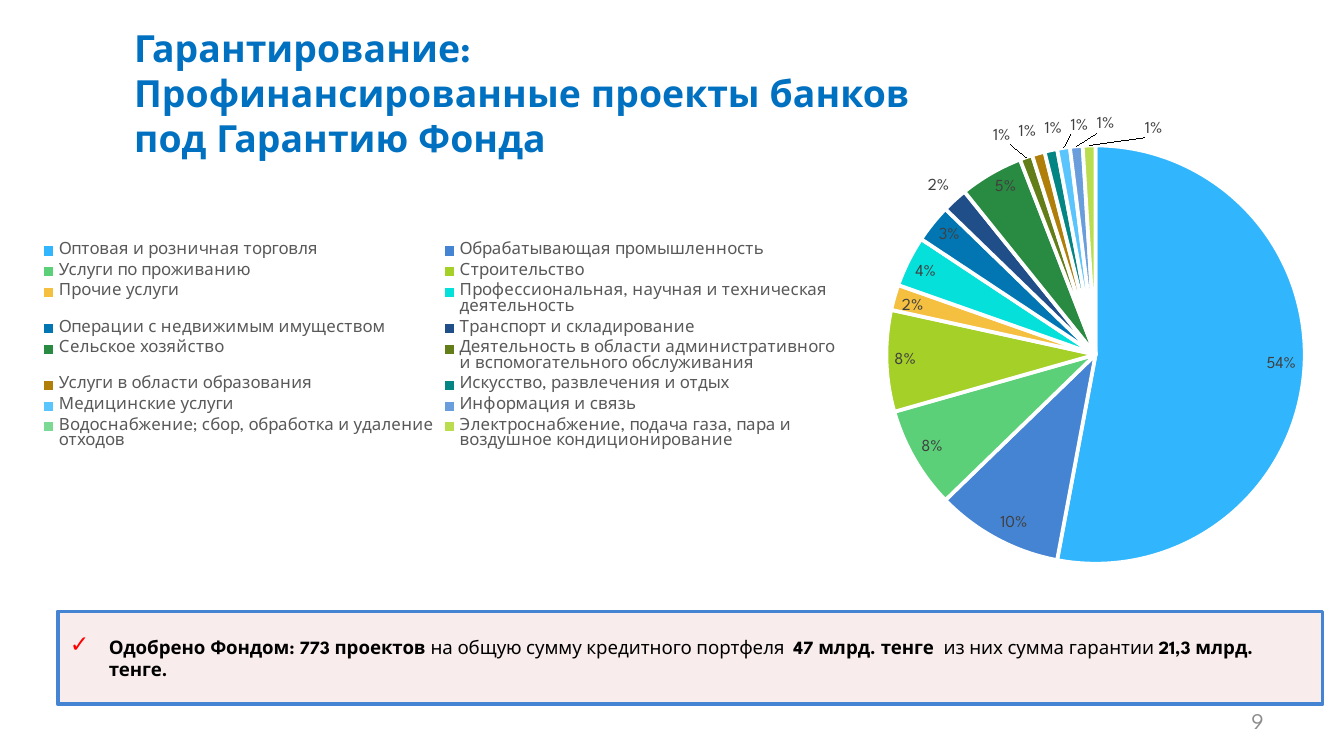
from typing import NamedTuple, Optional

from lxml.etree import SubElement
from pptx import Presentation
from pptx.chart.data import CategoryChartData
from pptx.dml.color import RGBColor
from pptx.enum.chart import XL_CHART_TYPE, XL_LABEL_POSITION, XL_LEGEND_POSITION
from pptx.enum.shapes import MSO_SHAPE
from pptx.enum.text import MSO_ANCHOR, PP_ALIGN
from pptx.oxml import parse_xml
from pptx.oxml.ns import nsdecls, qn
from pptx.util import Inches, Pt

FONT = "League Spartan"


class Sector(NamedTuple):
    name: str
    share: float
    color: str
    outside: bool = False
    shift: Optional[tuple[float, float]] = None  # label offset, share of the chart


SECTORS = [
    Sector("Оптовая и розничная торговля", 0.54, "31B6FD"),
    Sector("Обрабатывающая промышленность", 0.10, "4584D3"),
    Sector("Услуги по проживанию", 0.08, "5BD078"),
    Sector("Строительство", 0.08, "A5D028"),
    Sector("Прочие услуги", 0.02, "F5C040"),
    Sector("Профессиональная, научная и техническая деятельность", 0.04, "05E0DB"),
    Sector("Операции с недвижимым имуществом", 0.03, "0276B3"),
    Sector("Транспорт и складирование", 0.02, "204E88", True),
    Sector("Сельское хозяйство", 0.05, "288B41"),
    Sector("Деятельность в области административного и вспомогательного обслуживания",
           0.01, "637D18", True, (-0.01, -0.01)),
    Sector("Услуги в области образования", 0.01, "B07F09", True, (0, -0.01)),
    Sector("Искусство, развлечения и отдых", 0.01, "038683", True, (0.01, -0.01)),
    Sector("Медицинские услуги", 0.01, "5AC5FD", True, (0.02, -0.01)),
    Sector("Информация и связь", 0.01, "6A9DDC", True, (0.03, -0.01)),
    Sector("Водоснабжение; сбор, обработка и удаление отходов",
           0, "7CD993", True, (0.04, 0)),
    Sector("Электроснабжение, подача газа, пара и воздушное кондиционирование",
           0.01, "B9DD4F", True, (0.05, 0)),
]


def rgb(color: str) -> RGBColor:
    return RGBColor.from_string(color)


def set_font(font, size: float, color: str, bold: bool = False) -> None:
    for key, value in {"name": FONT, "size": Pt(size), "bold": bold}.items():
        setattr(font, key, value)
    font.color.rgb = rgb(color)


def add_text(s, box: tuple, lines: list[str], size: float, color: str,
             bold: bool = False, align=PP_ALIGN.LEFT, anchor=MSO_ANCHOR.TOP) -> None:
    tf = s.shapes.add_textbox(*map(Inches, box)).text_frame
    tf.word_wrap = True
    tf.vertical_anchor = anchor
    for i, line in enumerate(lines):
        p = tf.paragraphs[0] if i == 0 else tf.add_paragraph()
        p.alignment = align
        r = p.add_run()
        r.text = line
        set_font(r.font, size, color, bold)


def place(element, index: int, **values) -> None:
    """Give a chart part a manual layout; modes come before x, y, w and h."""
    for old in element.findall(qn("c:layout")):
        element.remove(old)
    parts = "".join(f'<c:{key} val="{value}"/>' for key, value in values.items())
    element.insert(index, parse_xml(
        f'<c:layout {nsdecls("c")}><c:manualLayout>{parts}</c:manualLayout></c:layout>'))


def add_sector_chart(s) -> None:
    data = CategoryChartData(number_format="0%")
    data.categories = [sector.name for sector in SECTORS]
    data.add_series("Series 1", [sector.share for sector in SECTORS])
    chart = s.shapes.add_chart(XL_CHART_TYPE.PIE, Inches(0.2), Inches(0.61),
                               Inches(9.64), Inches(3.94), data).chart
    chart.has_title = False
    set_font(chart.font, 10, "000000")
    plot = chart.plots[0]
    plot.vary_by_categories = True
    place(plot._element.getparent(), 0, layoutTarget="inner", xMode="edge",
          yMode="edge", x=0.66, y=0.12, w=0.33, h=0.79)

    chart.has_legend = True
    legend = chart.legend
    legend.position = XL_LEGEND_POSITION.LEFT
    legend.include_in_layout = False
    set_font(legend.font, 9, "595959")

    series = plot.series[0]
    labels = series.data_labels
    labels.show_value = True
    labels.number_format = "0%"
    labels.number_format_is_linked = False
    labels.position = XL_LABEL_POSITION.INSIDE_END
    set_font(labels.font, 9, "404040")
    for i, sector in enumerate(SECTORS):
        point = series.points[i]
        point.format.fill.solid()
        point.format.fill.fore_color.rgb = rgb(sector.color)
        point.format.line.color.rgb = rgb("FFFFFF")
        point.format.line.width = Pt(2)
        if sector.outside:
            label = point.data_label
            set_font(label.font, 9, "404040")
            label.position = XL_LABEL_POSITION.OUTSIDE_END
            if sector.shift:
                dx, dy = sector.shift
                place(label._dLbl, 1, x=dx, y=dy)


def add_summary(s) -> None:
    sp = s.shapes.add_shape(MSO_SHAPE.RECTANGLE, Inches(0.43), Inches(4.55),
                            Inches(9.41), Inches(0.69))
    sp.shadow.inherit = False
    sp.fill.solid()
    sp.fill.fore_color.rgb = rgb("F2DCDB")
    fill_color = sp._element.spPr.find(qn("a:solidFill"))[0]
    SubElement(fill_color, qn("a:alpha"), val="50000")
    sp.line.color.rgb = rgb("4584D3")
    sp.line.width = Pt(2)

    tf = sp.text_frame
    frame = {"word_wrap": True, "vertical_anchor": MSO_ANCHOR.MIDDLE,
             "margin_left": Inches(0.08), "margin_right": Inches(0.08),
             "margin_top": Inches(0.04), "margin_bottom": Inches(0.04)}
    for key, value in frame.items():
        setattr(tf, key, value)
    p = tf.paragraphs[0]
    p.alignment = PP_ALIGN.LEFT
    p.space_after = Pt(6)
    pPr = p._p.get_or_add_pPr()
    pPr.set("marL", str(Inches(0.3)))
    pPr.set("indent", str(Inches(-0.29)))
    SubElement(SubElement(pPr, qn("a:buClr")), qn("a:srgbClr"), val="FF0000")
    SubElement(pPr, qn("a:buSzPct"), val="125000")
    SubElement(pPr, qn("a:buFont"), typeface=FONT)
    SubElement(pPr, qn("a:buChar"), char="✓")
    runs = ["Одобрено Фондом: 773 проектов ", "на общую сумму кредитного портфеля  ",
            "47 млрд. тенге  ", "из них сумма гарантии ", "21,3 млрд. тенге."]
    for i, text in enumerate(runs):
        r = p.add_run()
        r.text = text
        set_font(r.font, 10, "000000", bold=i % 2 == 0)


def main() -> None:
    prs = Presentation()
    prs.slide_width = Inches(10)
    prs.slide_height = prs.slide_width * 9 // 16
    s = prs.slides.add_slide(prs.slide_layouts[6])
    add_text(s, (7.17, 5.21, 2.33, 0.3), ["9"], 12, "8C8C8C",
             align=PP_ALIGN.RIGHT, anchor=MSO_ANCHOR.MIDDLE)
    add_text(s, (0.9, 0.14, 8.11, 0.63),
             ["Гарантирование:", "Профинансированные проекты банков",
              "под Гарантию Фонда"], 20, "0070C0", bold=True)
    add_summary(s)
    add_sector_chart(s)
    prs.save("out.pptx")


if __name__ == "__main__":
    main()
